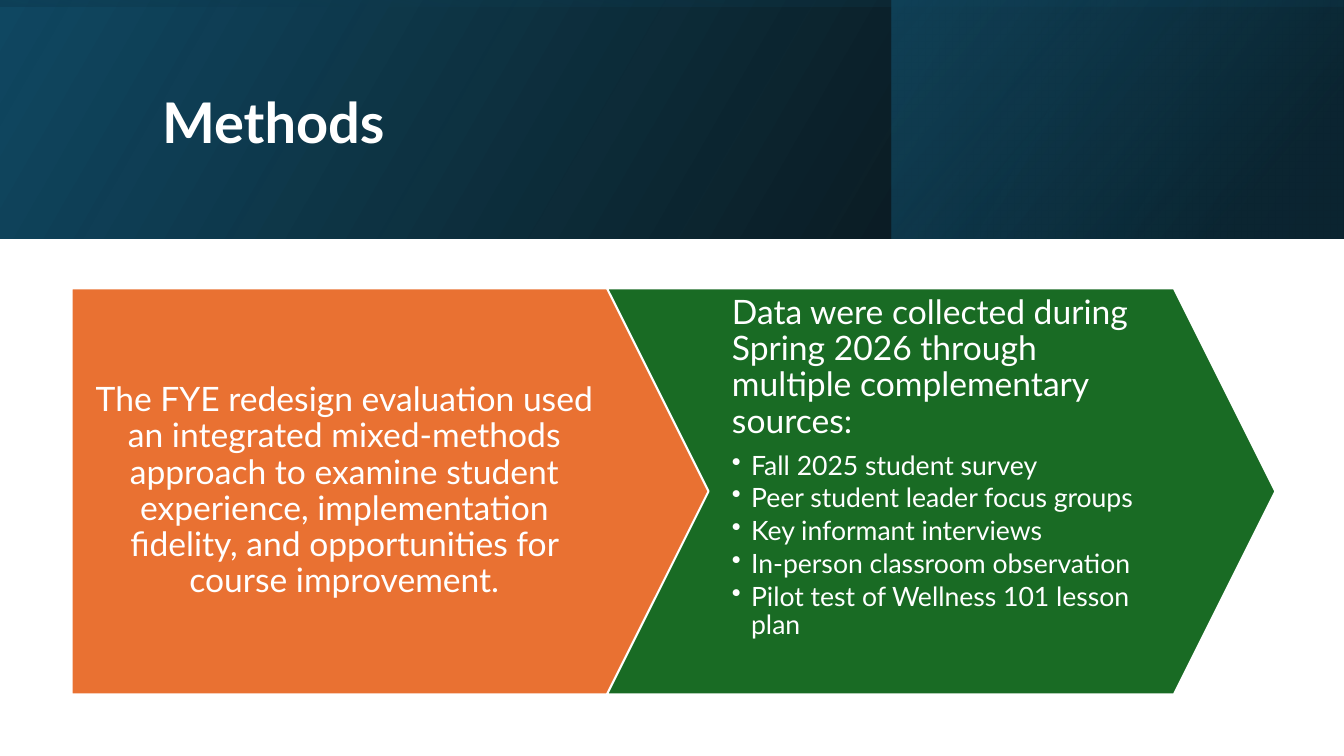
from pptx import Presentation
from pptx.dml.color import RGBColor
from pptx.enum.shapes import MSO_SHAPE
from pptx.enum.text import MSO_ANCHOR, PP_ALIGN
from pptx.oxml import parse_xml
from pptx.oxml.ns import nsdecls, qn
from pptx.util import Inches, Pt
from lxml import etree

RECT, PENTAGON, CHEVRON = MSO_SHAPE.RECTANGLE, MSO_SHAPE.PENTAGON, MSO_SHAPE.CHEVRON
TOP, MIDDLE = MSO_ANCHOR.TOP, MSO_ANCHOR.MIDDLE
LEFT, CENTER = PP_ALIGN.LEFT, PP_ALIGN.CENTER

WHITE = RGBColor(0xFF, 0xFF, 0xFF)
BLACK = RGBColor(0x00, 0x00, 0x00)
ORANGE = RGBColor(0xE9, 0x71, 0x32)
GREEN = RGBColor(0x19, 0x6B, 0x24)
NAVY = RGBColor(0x0B, 0x30, 0x41)
TEAL = RGBColor(0x10, 0x48, 0x62)
BLUE = RGBColor(0x15, 0x60, 0x82)

SLIDE_W, SLIDE_H, BANNER_H = 13.33, 7.5, 2.37
ARROW_TOP, ARROW_W, ARROW_H = 2.86, 6.63, 4.03


class Deck:
    font = "Lato"
    line_spacing = 0.9

    def __init__(self):
        self.prs = Presentation()
        self.prs.slide_width = Inches(SLIDE_W)
        self.prs.slide_height = Inches(SLIDE_H)
        self.s = self.prs.slides.add_slide(self.prs.slide_layouts[6])

    def shape(self, kind, x, y, w, h):
        sp = self.s.shapes.add_shape(kind, Inches(x), Inches(y), Inches(w), Inches(h))
        sp.shadow.inherit = False
        return sp

    def gradient(self, x, y, w, h, stops, angle, rotation=0):
        """Mirrored rectangle; stops are (position %, colour, opacity %)."""
        sp = self.shape(RECT, x, y, w, h)
        sp.rotation = rotation
        sp.line.fill.background()
        sp_pr = sp.element.spPr
        sp_pr.find(qn("a:xfrm")).set("flipH", "1")
        gs = "".join(
            f'<a:gs pos="{pos * 1000}"><a:srgbClr val="{color}">'
            f'<a:alpha val="{alpha * 1000}"/></a:srgbClr></a:gs>'
            for pos, color, alpha in stops)
        fill = parse_xml(
            f'<a:gradFill {nsdecls("a")} rotWithShape="1"><a:gsLst>{gs}</a:gsLst>'
            f'<a:lin ang="{angle * 60000}" scaled="0"/></a:gradFill>')
        sp_pr.find(qn("a:prstGeom")).addnext(fill)

    def arrow(self, kind, x, color):
        sp = self.shape(kind, x, ARROW_TOP, ARROW_W, ARROW_H)
        sp.adjustments[0] = 0.25
        sp.fill.solid()
        sp.fill.fore_color.rgb = color
        sp.line.color.rgb = WHITE
        sp.line.width = Pt(1.5)

    def text_box(self, x, y, w, h, anchor, insets=(0.1, 0.05, 0.1, 0.05)):
        tf = self.s.shapes.add_textbox(Inches(x), Inches(y), Inches(w), Inches(h)).text_frame
        tf.word_wrap = True
        tf.vertical_anchor = anchor
        tf.margin_left, tf.margin_top, tf.margin_right, tf.margin_bottom = map(Inches, insets)
        return tf

    def paragraph(self, tf, text, size, after=0, align=LEFT, bold=False, bullet=False):
        p = tf.paragraphs[0] if not tf.text else tf.add_paragraph()
        p.text = text
        p.alignment = align
        p.line_spacing = self.line_spacing
        p.space_after = Pt(after)
        if bullet:
            p.level = 1
            p_pr = p._p.get_or_add_pPr()
            p_pr.set("marL", str(Inches(0.19)))
            p_pr.set("indent", str(-Inches(0.19)))
            etree.SubElement(p_pr, qn("a:buChar")).set("char", "•")
        p.font.name = self.font
        p.font.size = Pt(size)
        p.font.bold = bold
        p.font.color.rgb = WHITE


def main():
    deck = Deck()

    # Banner
    deck.gradient(0, 0, SLIDE_W, BANNER_H, [(0, BLACK, 96), (100, TEAL, 100)], 330)
    deck.gradient(8.84, 0, 4.48, BANNER_H, [(19, NAVY, 68), (100, BLUE, 48)], 320)
    offset = (SLIDE_W - BANNER_H) / 2
    deck.gradient(offset, -offset, BANNER_H, SLIDE_W,
                  [(23, TEAL, 16), (99, BLACK, 45)], 350, rotation=270)
    title = deck.text_box(1.51, 0.38, 10.63, 1.72, MIDDLE)
    deck.paragraph(title, "Methods", 40, bold=True)

    # Approach
    deck.arrow(PENTAGON, 0.71, ORANGE)
    approach = deck.text_box(0.71, ARROW_TOP, 6.12, ARROW_H, MIDDLE, (0.23, 0.07, 0.94, 0.07))
    deck.paragraph(
        approach,
        "The FYE redesign evaluation used an integrated mixed-methods approach to examine "
        "student experience, implementation fidelity, and opportunities for course improvement.",
        24, after=8.4, align=CENTER)

    # Data sources
    deck.arrow(CHEVRON, 6.02, GREEN)
    sources = deck.text_box(7.03, ARROW_TOP, 4.61, ARROW_H, TOP, (0.23, 0.07, 0.23, 0.07))
    deck.paragraph(
        sources,
        "Data were collected during Spring 2026 through multiple complementary sources:",
        24, after=8.4)
    for source in ("Fall 2025 student survey", "Peer student leader focus groups",
                   "Key informant interviews", "In-person classroom observation",
                   "Pilot test of Wellness 101 lesson plan"):
        deck.paragraph(sources, source, 19, after=2.85, bullet=True)

    deck.prs.save("out.pptx")


if __name__ == "__main__":
    main()
